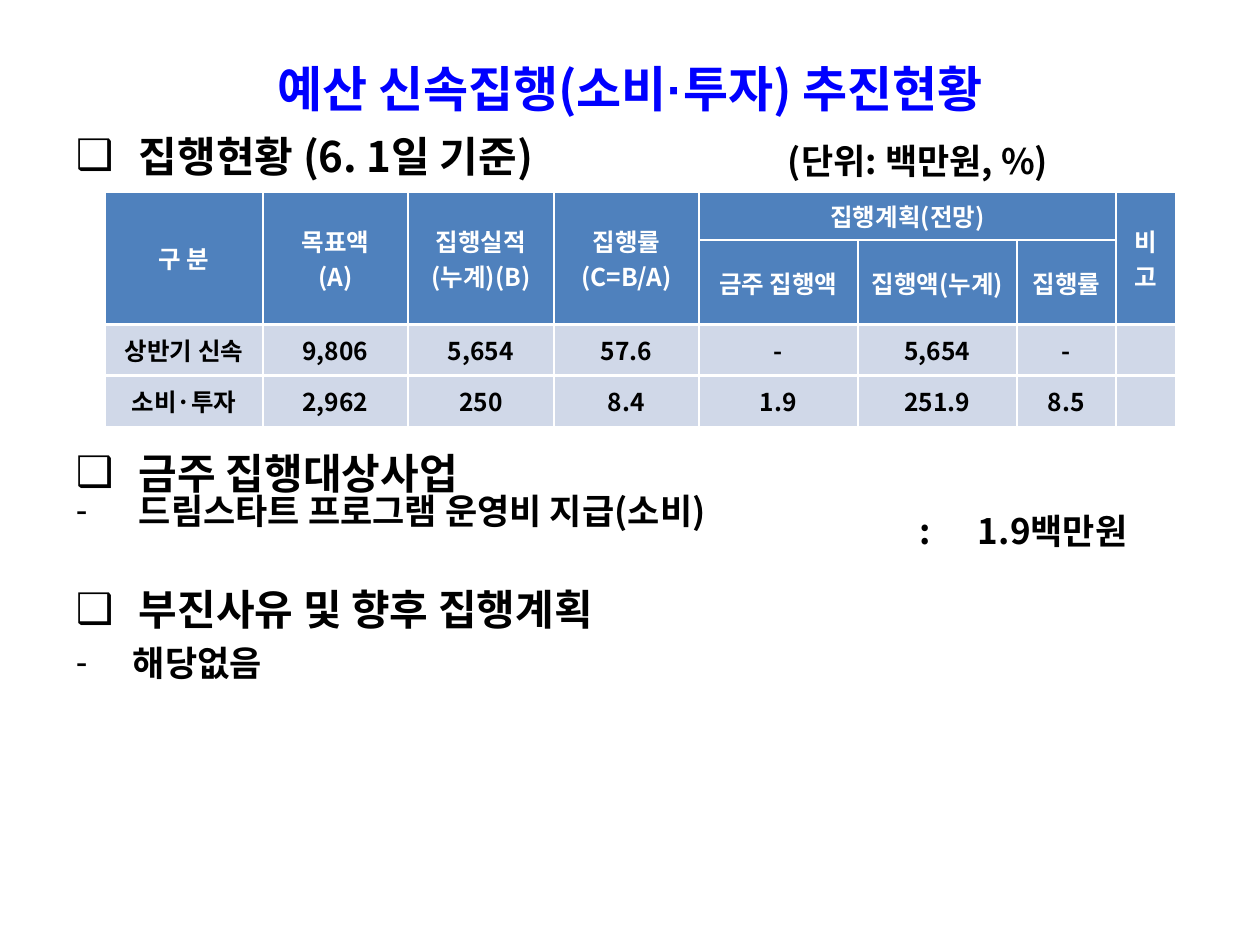
from dataclasses import dataclass

from lxml.etree import SubElement
from pptx import Presentation
from pptx.dml.color import RGBColor
from pptx.enum.text import MSO_ANCHOR, MSO_AUTO_SIZE, PP_ALIGN
from pptx.oxml import parse_xml
from pptx.oxml.ns import nsdecls, qn
from pptx.util import Emu, Pt

EMU_PER_PX = 914400 // 126
KOREAN, LATIN = "Noto Sans CJK KR", "Arial"
BLUE, BLACK, WHITE = "0000FF", "000000", "FFFFFF"
HEADER_FILL, DATA_FILL = "4F81BD", "D0D8E8"


@dataclass
class Item:
    text: str
    bullet: str
    size: int
    hang: int = 63
    space_before: float = 0
    line_spacing: float = 1


@dataclass
class Note:
    text: str
    left: int
    top: int
    width: int
    tab: int = 0


ITEMS = [
    Item("집행현황 (6. 1일 기준)", "❑", 24),
    Item("금주 집행대상사업", "❑", 24, space_before=152.5),
    Item("드림스타트 프로그램 운영비 지급(소비)", "-", 20, line_spacing=0.8),
    Item("부진사유 및 향후 집행계획", "❑", 24, space_before=30),
    Item("해당없음", "-", 20, hang=57, space_before=4),
]
NOTES = [
    Note("(단위: 백만원, %)", 788, 140, 330),
    Note(":\t1.9백만원", 919, 510, 260, tab=59),
]

COLUMN_WIDTHS = [158, 145, 146, 145, 159, 159, 99, 60]
ROW_HEIGHTS = [48, 84, 50, 49]
HEADER_ROWS = 2
ROWS = [
    ["구 분", "목표액\n(A)", "집행실적(누계)(B)", "집행률\n(C=B/A)",
     "집행계획(전망)", "", "", "비 고"],
    ["", "", "", "", "금주 집행액", "집행액(누계)", "집행률", ""],
    ["상반기 신속", "9,806", "5,654", "57.6", "-", "5,654", "-", ""],
    ["소비·투자", "2,962", "250", "8.4", "1.9", "251.9", "8.5", ""],
]
TALL_HEADERS = [0, 1, 2, 3, 7]
PLAN_COLUMNS = (4, 6)
HORIZONTAL_RULES = [1, 1.5, 2.25, 1.5, 1]
VERTICAL_RULES = [1, 1.5, 1.5, 1.5, 1.5, 1.5, 1.5, 1, 1]


def px(length: int) -> Emu:
    return Emu(length * EMU_PER_PX)


def color(code: str) -> RGBColor:
    return RGBColor.from_string(code)


def format_run(run, size: int, ink: str, font: str = KOREAN) -> None:
    run.font.size = Pt(size)
    run.font.bold = True
    run.font.color.rgb = color(ink)
    run.font.name = font
    SubElement(run.font._element, qn("a:ea")).set("typeface", font)


def place(shape, left: int, top: int, width: int, height: int) -> None:
    """Position a text shape and clear its margins and autofit."""
    shape.left, shape.top = px(left), px(top)
    shape.width, shape.height = px(width), px(height)
    frame = shape.text_frame
    frame.margin_left = frame.margin_right = frame.margin_top = frame.margin_bottom = 0
    frame.word_wrap = True
    frame.auto_size = MSO_AUTO_SIZE.NONE


def fill_title(title) -> None:
    place(title, 0, 50, 1260, 76)
    title.text_frame.vertical_anchor = MSO_ANCHOR.MIDDLE
    heading = title.text_frame.paragraphs[0]
    heading.alignment = PP_ALIGN.CENTER
    for text, font in [("예산 신속집행(소비", KOREAN), ("·", LATIN),
                       ("투자) 추진현황", KOREAN)]:
        run = heading.add_run()
        run.text = text
        format_run(run, 28, BLUE, font)


def add_bullet(paragraph, mark: str, hang: int) -> None:
    properties = paragraph._p.get_or_add_pPr()
    properties.set("marL", str(px(hang)))
    properties.set("indent", str(-px(hang)))
    ink = SubElement(properties, qn("a:buClr"))
    SubElement(ink, qn("a:srgbClr")).set("val", BLACK)
    SubElement(properties, qn("a:buFont")).set("typeface", LATIN)
    SubElement(properties, qn("a:buChar")).set("char", mark)


def fill_body(body, items: list[Item]) -> None:
    place(body, 76, 130, 1108, 640)
    frame = body.text_frame
    frame.vertical_anchor = MSO_ANCHOR.TOP
    frame.text = "\n".join(item.text for item in items)
    for paragraph, item in zip(frame.paragraphs, items):
        add_bullet(paragraph, item.bullet, item.hang)
        paragraph.space_before = Pt(item.space_before)
        paragraph.space_after = Pt(0)
        paragraph.line_spacing = item.line_spacing
        format_run(paragraph.runs[0], item.size, BLACK)


def add_note(slide, note: Note) -> None:
    box = slide.shapes.add_textbox(0, 0, 0, 0)
    place(box, note.left, note.top, note.width, 52)
    paragraph = box.text_frame.paragraphs[0]
    paragraph.text = note.text
    if note.tab:
        stops = SubElement(paragraph._p.get_or_add_pPr(), qn("a:tabLst"))
        stop = SubElement(stops, qn("a:tab"))
        stop.set("pos", str(px(note.tab)))
        stop.set("algn", "l")
    for run in paragraph.runs:
        format_run(run, 20, BLACK)


def set_borders(cell, row: int, column: int) -> None:
    sides = {
        "lnL": VERTICAL_RULES[column],
        "lnR": VERTICAL_RULES[column + cell.span_width],
        "lnT": HORIZONTAL_RULES[row],
        "lnB": HORIZONTAL_RULES[row + cell.span_height],
    }
    properties = cell._tc.get_or_add_tcPr()
    for position, (side, weight) in enumerate(sides.items()):
        properties.insert(position, parse_xml(
            f'<a:{side} {nsdecls("a")} w="{Pt(weight)}"><a:solidFill>'
            f'<a:srgbClr val="{WHITE}"/></a:solidFill></a:{side}>'))


def fill_cell(cell, text: str, is_header: bool) -> None:
    cell.fill.solid()
    cell.fill.fore_color.rgb = color(HEADER_FILL if is_header else DATA_FILL)
    cell.vertical_anchor = MSO_ANCHOR.MIDDLE
    cell.text_frame.text = text
    for paragraph in cell.text_frame.paragraphs:
        paragraph.alignment = PP_ALIGN.CENTER
        for run in paragraph.runs:
            format_run(run, 14, WHITE if is_header else BLACK)


def add_budget_table(slide) -> None:
    table = slide.shapes.add_table(
        len(ROWS), len(COLUMN_WIDTHS), px(105), px(192),
        px(sum(COLUMN_WIDTHS)), px(sum(ROW_HEIGHTS))).table
    for column, width in zip(table.columns, COLUMN_WIDTHS):
        column.width = px(width)
    for row, height in zip(table.rows, ROW_HEIGHTS):
        row.height = px(height)
    for column in TALL_HEADERS:
        table.cell(0, column).merge(table.cell(1, column))
    first, last = PLAN_COLUMNS
    table.cell(0, first).merge(table.cell(0, last))
    for r, texts in enumerate(ROWS):
        for c, text in enumerate(texts):
            cell = table.cell(r, c)
            if not cell.is_spanned:
                fill_cell(cell, text, r < HEADER_ROWS)
                set_borders(cell, r, c)


def main() -> None:
    deck = Presentation()
    deck.slide_width, deck.slide_height = px(1260), px(945)
    slide = deck.slides.add_slide(deck.slide_layouts[1])
    fill_title(slide.shapes.title)
    fill_body(slide.placeholders[1], ITEMS)
    for note in NOTES:
        add_note(slide, note)
    add_budget_table(slide)
    deck.save("out.pptx")


if __name__ == "__main__":
    main()
